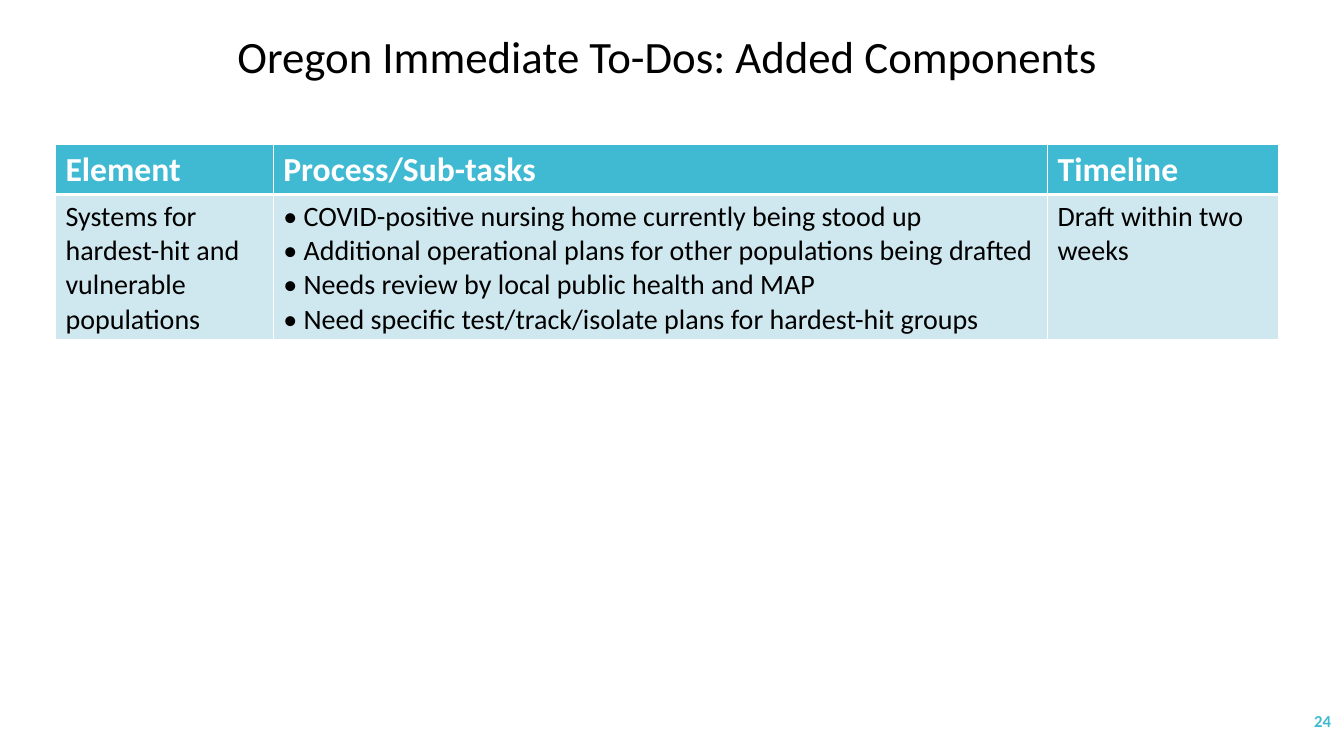
"""Builds the slide listing the added components of Oregon's immediate to-dos."""
from lxml import etree
from pptx import Presentation
from pptx.dml.color import RGBColor
from pptx.enum.text import MSO_ANCHOR as Anchor, PP_ALIGN as Align
from pptx.oxml.ns import qn
from pptx.util import Inches, Pt

COLORS = {"teal": "40BAD2", "pale": "CFE7EE", "white": "FFFFFF", "black": "000000"}


def write_text(text_frame, text, size, color="black", bold=False, align=Align.LEFT):
    text_frame.word_wrap = True
    text_frame.text = text
    for paragraph in text_frame.paragraphs:
        paragraph.alignment = align
        font = paragraph.runs[0].font
        font.name = "Calibri"
        font.size = Pt(size)
        font.bold = bold
        font.color.rgb = RGBColor.from_string(COLORS[color])


def set_borders(cell, widths):
    properties = cell._tc.get_or_add_tcPr()
    for position, (side, width) in enumerate(widths.items()):
        line = etree.Element(qn(f"a:ln{side}"), w=str(Pt(width)))
        fill = etree.SubElement(line, qn("a:solidFill"))
        etree.SubElement(fill, qn("a:srgbClr"), val=COLORS["white"])
        properties.insert(position, line)


presentation = Presentation()
presentation.slide_width = Inches(13.33)
presentation.slide_height = Inches(7.5)
slide = presentation.slides.add_slide(presentation.slide_layouts[6])

page_number = slide.shapes.add_textbox(Inches(11.63), Inches(6.95), Inches(1.67), Inches(0.4))
page_number.text_frame.vertical_anchor = Anchor.MIDDLE
write_text(page_number.text_frame, "24", size=12, color="teal", bold=True, align=Align.RIGHT)

rows = [
    ["Element", "Process/Sub-tasks", "Timeline"],
    [
        "Systems for hardest-hit and vulnerable populations",
        "• COVID-positive nursing home currently being stood up\n"
        "• Additional operational plans for other populations being drafted\n"
        "• Needs review by local public health and MAP\n"
        "• Need specific test/track/isolate plans for hardest-hit groups",
        "Draft within two weeks",
    ],
]
row_styles = [
    {"fill": "teal", "text": {"size": 24, "color": "white", "bold": True},
     "borders": {"L": 1, "R": 1, "T": 1, "B": 3}},
    {"fill": "pale", "text": {"size": 20},
     "borders": {"L": 1, "R": 1, "T": 3, "B": 1}},
]
column_widths = [2.16, 7.68, 2.29]
row_heights = [0.49, 1.44]

table = slide.shapes.add_table(
    len(rows), len(column_widths), Inches(0.55), Inches(1.43),
    Inches(sum(column_widths)), Inches(sum(row_heights)),
).table
for column, width in zip(table.columns, column_widths):
    column.width = Inches(width)
for row, height, texts, style in zip(table.rows, row_heights, rows, row_styles):
    row.height = Inches(height)
    for cell, text in zip(row.cells, texts):
        cell.fill.solid()
        cell.fill.fore_color.rgb = RGBColor.from_string(COLORS[style["fill"]])
        set_borders(cell, style["borders"])
        write_text(cell.text_frame, text, **style["text"])

title = slide.shapes.add_textbox(Inches(1.78), Inches(0.24), Inches(9.68), Inches(0.64))
write_text(title.text_frame, "Oregon Immediate To-Dos: Added Components", size=32, align=Align.CENTER)

presentation.save("out.pptx")
